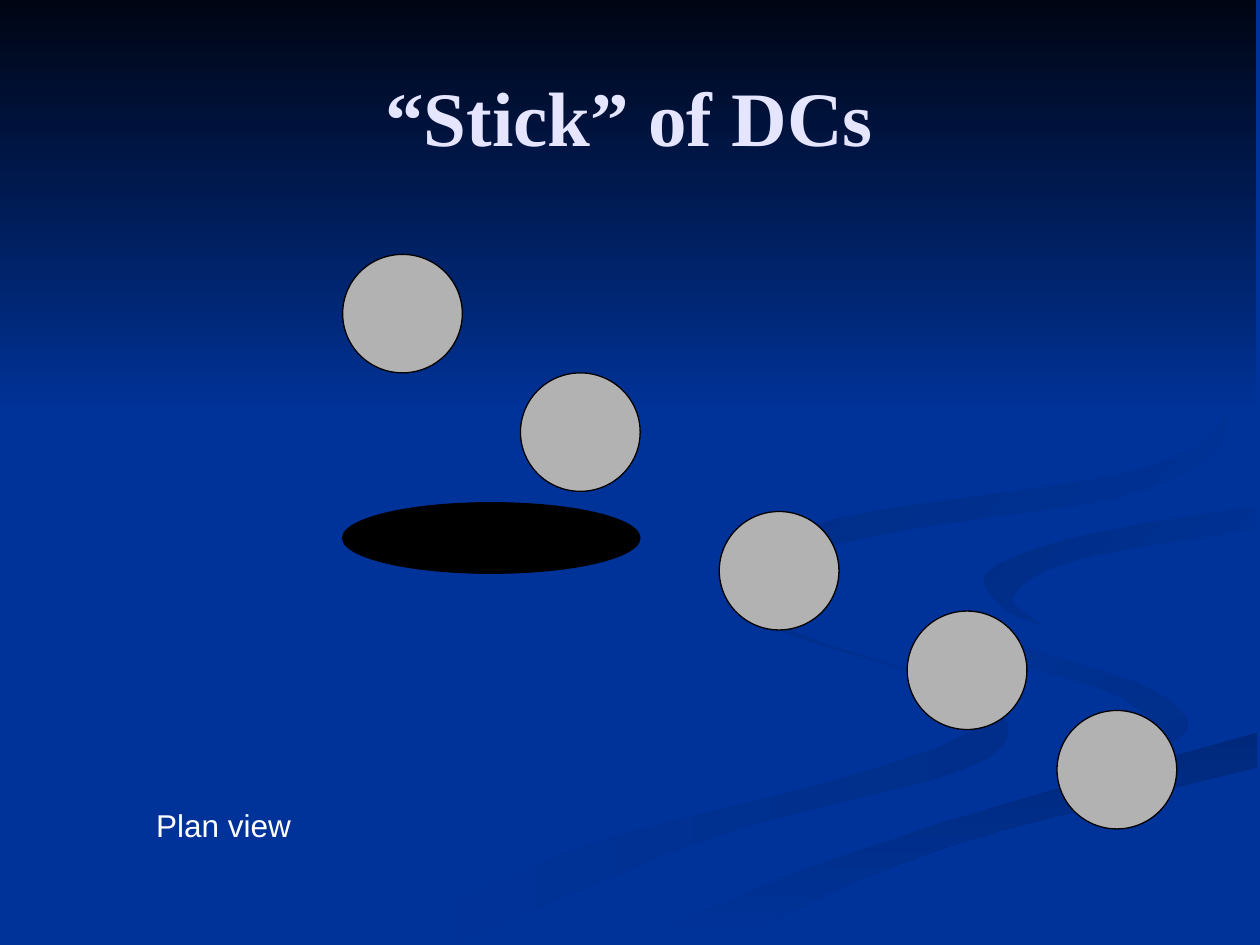
from dataclasses import dataclass
from typing import Any

from pptx import Presentation
from pptx.dml.color import RGBColor
from pptx.enum.shapes import MSO_SHAPE
from pptx.enum.text import MSO_ANCHOR, MSO_AUTO_SIZE, PP_ALIGN
from pptx.util import Pt

Point = tuple[float, float]

COLORS = {
    "background": "003399",
    "night": "000514",
    "swirl": "002E8A",
    "swirl_low": "00297C",
    "swirl_bend": "002C85",
    "swirl_top": "002B81",
    "charge": "B2B2B2",
    "black": "000000",
    "title": "E5E5FF",
    "white": "FFFFFF",
}
OUTLINE_UNIT = Pt(0.72)
CURVE_STEPS = 6
CHARGE_SIZE = (68.4, 67.7)
CHARGE_CORNERS = [(604, 406), (518.4, 349.2), (411, 292.3), (195.8, 145.4), (297.4, 213.1)]


@dataclass
class Region:
    start: str
    end: str
    angle: int
    edges: list[list[Point]]


@dataclass
class Oval:
    left: float
    top: float
    width: float
    height: float
    color: str


REGIONS = [
    Region("swirl", "background", 180, [
        [(575, 459), (594, 485), (661, 513), (767, 547), (800, 581), (756, 614), (564, 665), (361, 749)],
        [(300, 749), (458, 674), (699, 609), (786, 566), (728, 535), (631, 505), (576, 480)],
    ]),
    Region("swirl", "background", 225, [
        [(724, 464), (745, 490), (830, 519), (930, 553), (941, 581), (894, 605)],
        [(894, 605), (918, 581), (880, 549), (781, 518), (733, 488)],
    ]),
    Region("swirl_low", "background", 90, [
        [(503, 749), (630, 693), (797, 638), (998, 581)],
        [(998, 609), (752, 672), (571, 749)],
    ]),
    Region("background", "background", 0, [
        [(477, 749), (663, 668), (892, 605), (943, 574), (889, 535), (745, 490), (732, 446), (830, 415),
         (999, 387)],
        [(999, 402), (811, 437), (786, 473), (866, 509), (999, 538)],
        [(999, 581), (797, 638), (630, 693), (503, 749)],
    ]),
    Region("background", "swirl_bend", 225, [
        [(998, 402), (865, 424), (785, 453), (797, 483), (826, 496)],
        [(826, 496), (805, 472), (859, 443), (998, 420)],
    ]),
    Region("background", "swirl_top", 225, [
        [(810, 233), (911, 273), (975, 335), (909, 389), (711, 422), (601, 451), (633, 488)],
        [(633, 488), (577, 452), (667, 411), (895, 375), (970, 330), (915, 277)],
    ]),
    Region("night", "background", 90, [[(0, 0), (997, 0)], [(997, 331), (0, 331)]]),
]


def rgb(name: str) -> RGBColor:
    return RGBColor.from_string(COLORS[name])


def blend(before: float, start: float, end: float, after: float, t: float) -> float:
    return start + t / 2 * (
        end - before
        + t * (2 * before - 5 * start + 4 * end - after + t * (3 * (start - end) + after - before)))


def smooth_edge(edge: list[Point]) -> list[Point]:
    padded = [edge[0], *edge, edge[-1]]
    curve = [edge[0]]
    for knots in zip(padded, padded[1:], padded[2:], padded[3:]):
        xs, ys = zip(*knots)
        for step in range(1, CURVE_STEPS + 1):
            t = step / CURVE_STEPS
            curve.append((blend(*xs, t), blend(*ys, t)))
    return curve


def draw_region(slide: Any, region: Region) -> None:
    outline = [point for edge in region.edges for point in smooth_edge(edge)]
    builder = slide.shapes.build_freeform(*outline[0], scale=OUTLINE_UNIT)
    builder.add_line_segments(outline[1:], close=True)
    shape = builder.convert_to_shape()
    shape.shadow.inherit = False
    shape.line.fill.background()
    if region.start == region.end:
        shape.fill.solid()
        shape.fill.fore_color.rgb = rgb(region.start)
        return
    shape.fill.gradient()
    shape.fill.gradient_angle = 360 - region.angle
    for stop, name, position in zip(shape.fill.gradient_stops, (region.start, region.end), (0, 1)):
        stop.color.rgb = rgb(name)
        stop.position = position


def draw_oval(slide: Any, oval: Oval) -> None:
    shape = slide.shapes.add_shape(
        MSO_SHAPE.OVAL, Pt(oval.left), Pt(oval.top), Pt(oval.width), Pt(oval.height))
    shape.shadow.inherit = False
    shape.fill.solid()
    shape.fill.fore_color.rgb = rgb(oval.color)
    shape.line.color.rgb = rgb("black")
    shape.line.width = Pt(0.75)


def write_text(shape: Any, text: str, color: str, alignment: PP_ALIGN, font_format: dict[str, Any]) -> None:
    paragraph = shape.text_frame.paragraphs[0]
    paragraph.alignment = alignment
    run = paragraph.add_run()
    run.text = text
    run.font.color.rgb = rgb(color)
    for attribute, value in font_format.items():
        setattr(run.font, attribute, value)


def main() -> None:
    presentation = Presentation()
    presentation.slide_width, presentation.slide_height = Pt(720), Pt(540)
    slide = presentation.slides.add_slide(presentation.slide_layouts[5])
    slide.background.fill.solid()
    slide.background.fill.fore_color.rgb = rgb("background")

    for region in REGIONS:
        draw_region(slide, region)
    for left, top in CHARGE_CORNERS:
        draw_oval(slide, Oval(left, top, *CHARGE_SIZE, "charge"))
    draw_oval(slide, Oval(195.8, 287.3, 169.9, 40.3, "black"))

    title = slide.shapes.title
    placement = {"left": Pt(36), "top": Pt(21.6), "width": Pt(647.3), "height": Pt(89.3)}
    for attribute, value in placement.items():
        setattr(title, attribute, value)
    title.text_frame.auto_size = MSO_AUTO_SIZE.NONE
    title.text_frame.vertical_anchor = MSO_ANCHOR.MIDDLE
    write_text(title, "“Stick” of DCs", "title", PP_ALIGN.CENTER,
               {"name": "Times New Roman", "size": Pt(44), "bold": True})
    title.element.getparent().append(title.element)

    caption = slide.shapes.add_textbox(Pt(82.1), Pt(457.2), Pt(113.8), Pt(28.8))
    caption.text_frame.word_wrap = True
    write_text(caption, "Plan view", "white", PP_ALIGN.LEFT, {"name": "Arial", "size": Pt(18)})

    presentation.save("out.pptx")


if __name__ == "__main__":
    main()
